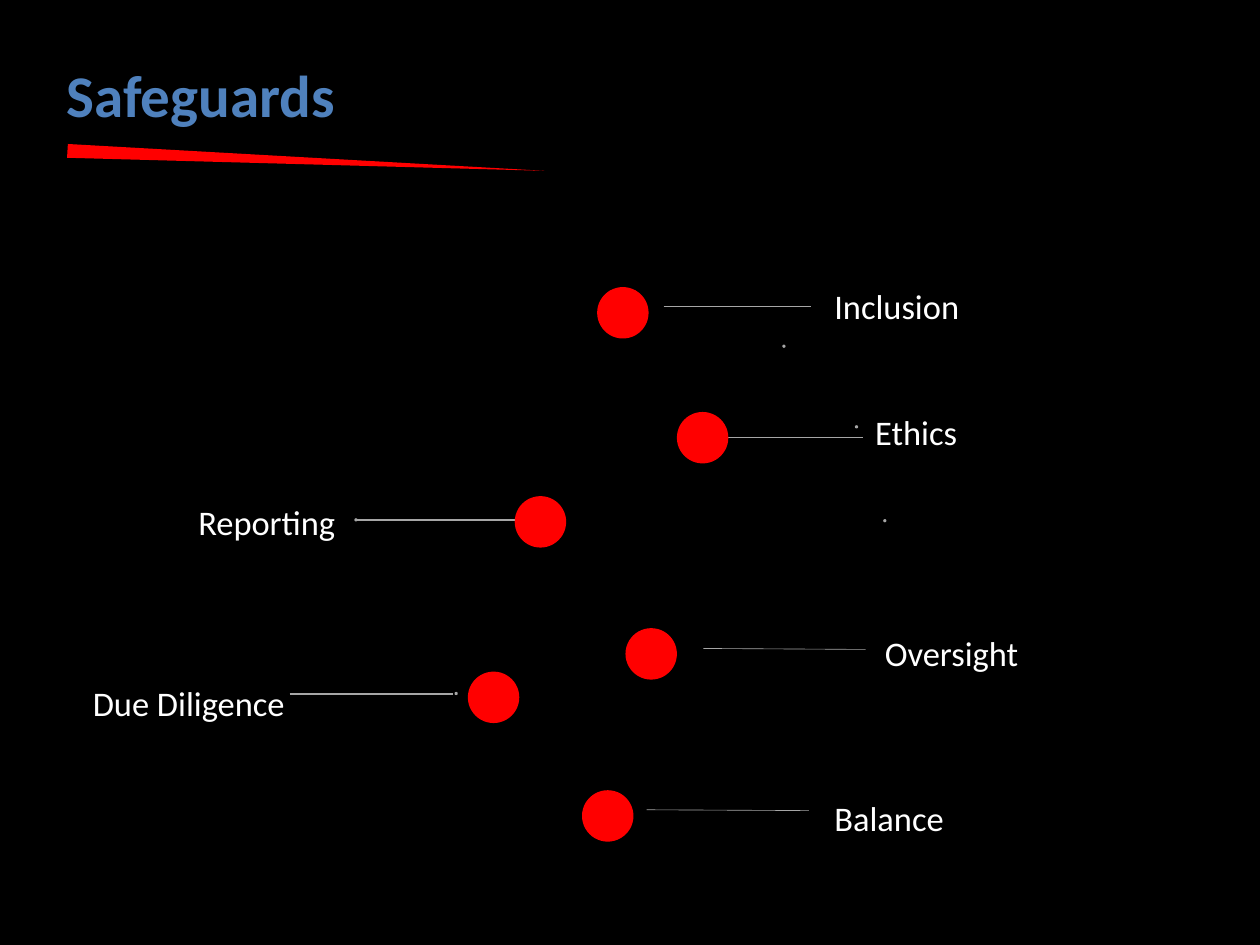
from pptx import Presentation
from pptx.dml.color import RGBColor
from pptx.enum.shapes import MSO_CONNECTOR, MSO_SHAPE
from pptx.oxml.ns import qn
from pptx.util import Pt
from lxml.etree import SubElement

COLORS = {"back": "000000", "title": "4F81BD", "accent": "FF0000",
          "line": "A6A6A6", "label": "FFFFFF"}
FONT = "Calibri"
CIRCLE = 41.8
DOT = 2.6
LABEL_HEIGHT = 41

# label, label left/top/width, circle left/top, line x1/y1/x2/y2, line width
SAFEGUARDS = [
    ("Inclusion", (603, 0.2, 261), (417.3, 5.3), (471.3, 21.1, 590.8, 21.1), 0.5),
    ("Ethics", (636.2, 102.5, 120), (482.1, 106.8), (523.8, 127.7, 633.3, 127.7), 0.5),
    ("Reporting", (86.1, 175.9, 168), (350.3, 175.2), (221, 194.6, 353, 194.6), 1.27),
    ("Oversight", (644.1, 281.8, 263), (440.3, 282.5), (503.7, 299, 635.4, 299.8), 0.5),
    ("Due Diligence", (0.4, 322.8, 180), (312.2, 317.8), (167.4, 335.8, 299.9, 335.8), 1.27),
    ("Balance", (603, 416.4, 263), (405, 414.2), (457.6, 430.1, 589.4, 430.8), 0.5),
]
DOTS = [(567.8, 52.1), (626.8, 117.6), (649.8, 193.9), (301.4, 334.3), (220, 193.2)]


def rgb(name):
    """Return the named colour."""
    return RGBColor.from_string(COLORS[name])


def paint(sp, color):
    """Fill a shape flat, without outline or shadow."""
    sp.shadow.inherit = False
    sp.fill.solid()
    sp.fill.fore_color.rgb = rgb(color)
    sp.line.fill.background()


def add_text(s, text, box, size, color, bold=False):
    """Add a one-line text box and return its text frame."""
    tf = s.shapes.add_textbox(*map(Pt, box)).text_frame
    tf.word_wrap = True
    p = tf.paragraphs[0]
    p.text = text
    p.font.name, p.font.size, p.font.bold = FONT, Pt(size), bold
    p.font.color.rgb = rgb(color)
    return tf


def add_disc(s, x, y, size, color):
    """Add a filled circle."""
    paint(s.shapes.add_shape(MSO_SHAPE.OVAL, Pt(x), Pt(y), Pt(size), Pt(size)), color)


def add_line(s, x1, y1, x2, y2, width):
    """Add a thin leader line."""
    sp = s.shapes.add_connector(MSO_CONNECTOR.STRAIGHT, Pt(x1), Pt(y1), Pt(x2), Pt(y2))
    sp.line.color.rgb = rgb("line")
    sp.line.width = Pt(width)
    SubElement(sp._element.spPr, qn("a:effectLst"))


def add_heading(s, left, top, width, height):
    """Add the title and the tapering stroke beneath it."""
    tf = add_text(s, "Safeguards", (left, top, width, height), 48, "title", True)
    tf.margin_left = tf.margin_right = tf.margin_bottom = 0
    tf.margin_top = Pt(1)
    tf.paragraphs[0].space_before = Pt(1)
    wedge = s.shapes.build_freeform(Pt(left + 1.2), Pt(top + 70.2))
    wedge.add_line_segments([(Pt(left + 388.5), Pt(top + 92)),
                             (Pt(left + 0.5), Pt(top + 81.4))], close=True)
    paint(wedge.convert_to_shape(), "accent")


def add_diagram(s, left, top):
    """Add the circles, leader lines and labels of the safeguards."""
    for text, (lx, ly, width), (cx, cy), (x1, y1, x2, y2), weight in SAFEGUARDS:
        add_line(s, left + x1, top + y1, left + x2, top + y2, weight)
        add_disc(s, left + cx, top + cy, CIRCLE, "accent")
        add_text(s, text, (left + lx, top + ly, width, LABEL_HEIGHT), 28, "label")
    for x, y in DOTS:
        add_disc(s, left + x, top + y, DOT, "line")


def main():
    """Build the slide and save it."""
    prs = Presentation()
    prs.slide_width, prs.slide_height = Pt(1024), Pt(768)
    s = prs.slides.add_slide(prs.slide_layouts[6])
    s.background.fill.solid()
    s.background.fill.fore_color.rgb = rgb("back")
    add_heading(s, 54, 46.8, 493, 59)
    add_diagram(s, 68, 228)
    prs.save("out.pptx")


if __name__ == "__main__":
    main()
